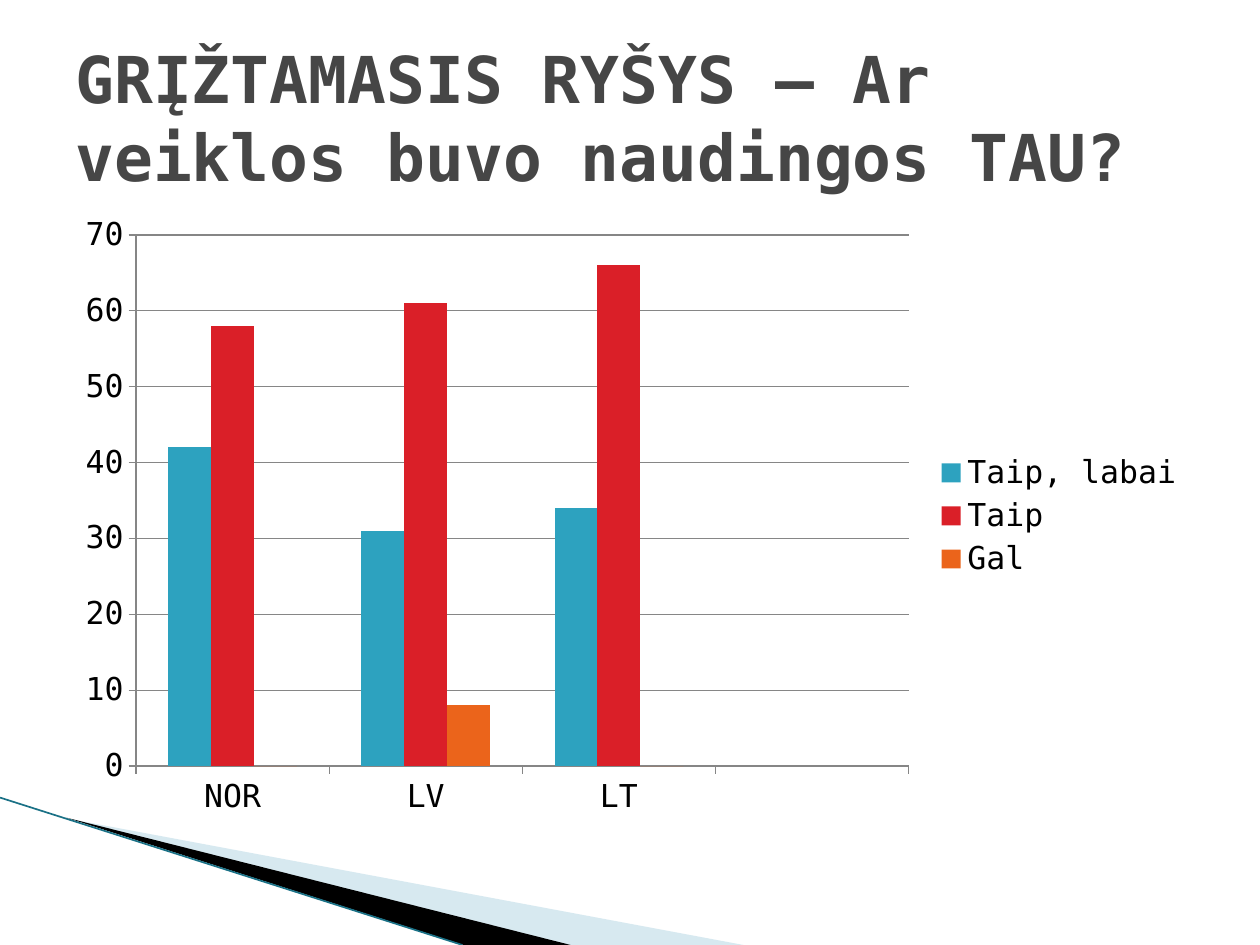
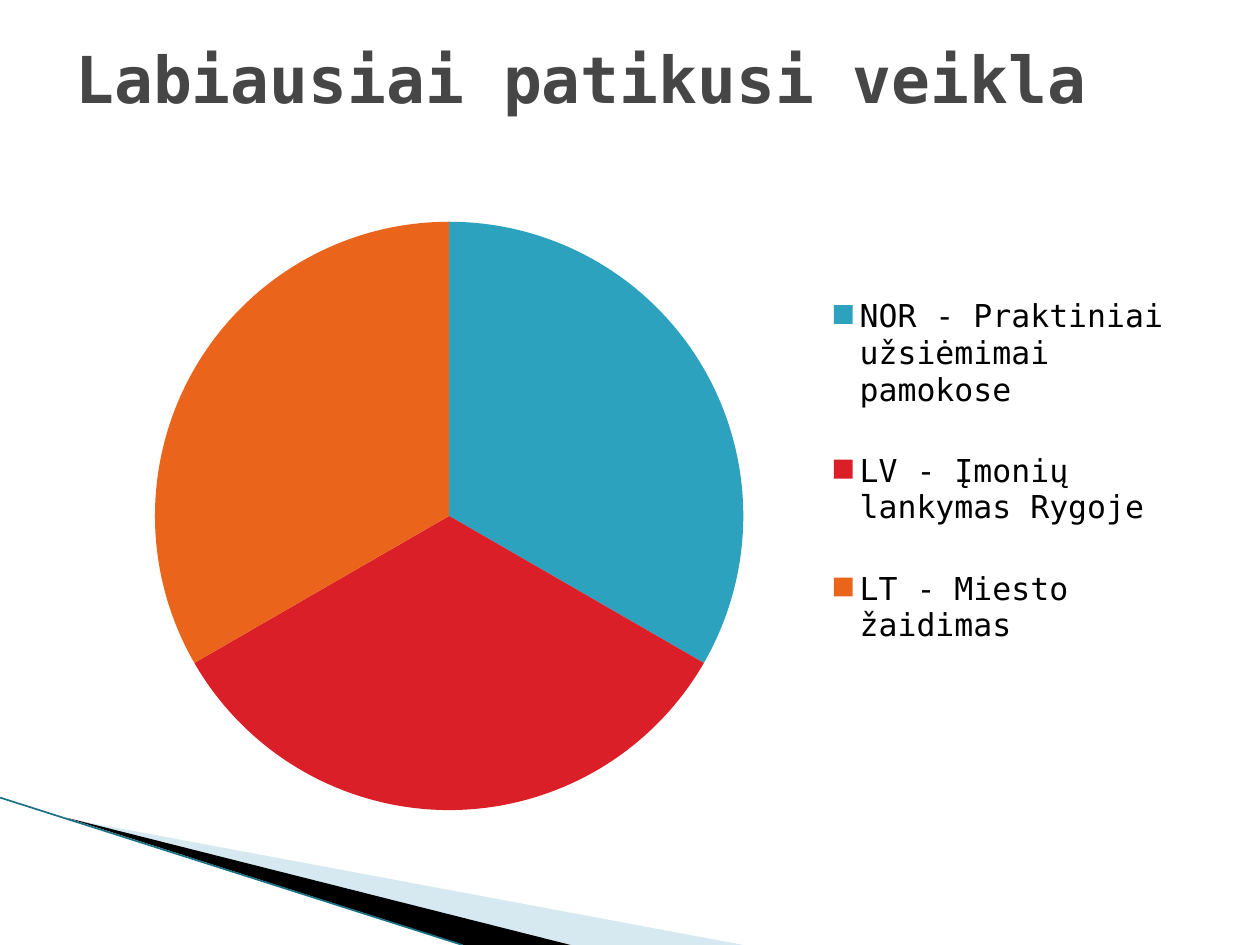
from lxml import etree
from pptx import Presentation
from pptx import util as u
from pptx.chart.data import CategoryChartData
from pptx.dml.color import RGBColor
from pptx.enum import chart as charts, shapes, text
from pptx.oxml import ns

COLOURS = {
    "title": "464646",
    "text": "000000",
    "axis": "868686",
    "pale band": "A0CBDC",
    "dark band": "000000",
    "edge": "1A7186",
    "blue": "2DA2BF",
    "red": "DA1F28",
    "orange": "EB641B",
}
SERIES_COLOURS = ("blue", "red", "orange")
FONT = "DejaVu Sans Mono"
CHART_BOX = (0.5, 1.62, 9, 4.95)


def colour(name):
    return RGBColor.from_string(COLOURS[name])


class Deck:
    def __init__(self):
        self.presentation = Presentation()
        self.presentation.slide_width = u.Inches(10)
        self.presentation.slide_height = u.Inches(7.5)
        self.slide = None

    def add_slide(self, title):
        layout = self.presentation.slide_layouts[6]
        self.slide = self.presentation.slides.add_slide(layout)
        self.band([(0.55, 6.5), (5.9, 7.5), (4.52, 7.5)], "pale band", opacity=42)
        self.band([(0.53, 6.49), (4.53, 7.5), (3.68, 7.5)], "dark band")
        self.line((0, 6.33), (3.67, 7.5), "edge", 0.95)
        self.title(title)

    def band(self, points, fill, opacity=100):
        corners = [(u.Inches(x), u.Inches(y)) for x, y in points]
        builder = self.slide.shapes.build_freeform(*corners[0])
        builder.add_line_segments(corners[1:], close=True)
        shape = builder.convert_to_shape()
        shape.shadow.inherit = False
        shape.line.fill.background()
        shape.fill.solid()
        shape.fill.fore_color.rgb = colour(fill)
        if opacity < 100:
            fill_colour = shape.element.spPr.find(".//" + ns.qn("a:srgbClr"))
            alpha = etree.SubElement(fill_colour, ns.qn("a:alpha"))
            alpha.set("val", str(opacity * 1000))

    def line(self, start, end, line_colour, width):
        ends = [u.Inches(value) for value in start + end]
        connector = self.slide.shapes.add_connector(
            shapes.MSO_CONNECTOR.STRAIGHT, *ends)
        connector.line.color.rgb = colour(line_colour)
        connector.line.width = u.Pt(width)
        etree.SubElement(connector.element.spPr, ns.qn("a:effectLst"))

    def title(self, words):
        box = self.slide.shapes.add_textbox(
            u.Inches(0.5), u.Inches(0.3), u.Inches(9), u.Inches(1.25))
        frame = box.text_frame
        frame.word_wrap = True
        frame.vertical_anchor = text.MSO_ANCHOR.TOP
        frame.margin_top = u.Inches(0.01)
        run = frame.paragraphs[0].add_run()
        run.text = words
        run.font.name = FONT
        run.font.size = u.Pt(36.9)
        run.font.bold = True
        run.font.color.rgb = colour("title")

    def chart(self, kind, categories, series):
        data = CategoryChartData()
        data.categories = categories
        for name, values in series:
            data.add_series(name, values)
        box = [u.Inches(value) for value in CHART_BOX]
        chart = self.slide.shapes.add_chart(kind, *box, data).chart
        chart.has_title = False
        chart.font.name = FONT
        chart.font.size = u.Pt(18)
        chart.font.color.rgb = colour("text")
        chart.has_legend = True
        chart.legend.position = charts.XL_LEGEND_POSITION.RIGHT
        chart.legend.include_in_layout = False
        return chart

    def column_chart(self, categories, series):
        chart = self.chart(charts.XL_CHART_TYPE.COLUMN_CLUSTERED, categories, series)
        plot = chart.plots[0]
        plot.gap_width = 150
        plot.overlap = 0
        plot.vary_by_categories = False
        for column, name in zip(plot.series, SERIES_COLOURS):
            self.paint(column, name)
        for axis in (chart.category_axis, chart.value_axis):
            axis.major_tick_mark = charts.XL_TICK_MARK.OUTSIDE
            axis.format.line.color.rgb = colour("axis")
        gridlines = chart.value_axis.major_gridlines
        gridlines.format.line.color.rgb = colour("axis")

    def pie_chart(self, categories, name, values):
        chart = self.chart(charts.XL_CHART_TYPE.PIE, categories, [(name, values)])
        plot = chart.plots[0]
        plot.vary_by_categories = True
        for index, fill in enumerate(SERIES_COLOURS):
            self.paint(plot.series[0].points[index], fill)
        plot_area = chart.element.find(".//" + ns.qn("c:plotArea"))
        legend = chart.element.find(".//" + ns.qn("c:legend"))
        self.place(plot_area, 1.23, 1.76, 4.67, 4.67, inner=True)
        self.place(legend, 6.5, 2.02, 2.85, 3.45)

    @staticmethod
    def paint(part, name):
        part.format.fill.solid()
        part.format.fill.fore_color.rgb = colour(name)

    @staticmethod
    def place(part, left, top, width, height, inner=False):
        """Fix a chart part at a place on the slide, given in inches."""
        for old in part.findall(ns.qn("c:layout")):
            part.remove(old)
        layout = etree.Element(ns.qn("c:layout"))
        manual = etree.SubElement(layout, ns.qn("c:manualLayout"))
        chart_left, chart_top, chart_width, chart_height = CHART_BOX
        settings = [("layoutTarget", "inner")] if inner else []
        settings += [
            ("xMode", "edge"),
            ("yMode", "edge"),
            ("x", (left - chart_left) / chart_width),
            ("y", (top - chart_top) / chart_height),
            ("w", width / chart_width),
            ("h", height / chart_height),
        ]
        for tag, value in settings:
            etree.SubElement(manual, ns.qn("c:" + tag)).set("val", str(value))
        position = part.find(ns.qn("c:legendPos"))
        part.insert(0 if position is None else 1, layout)


def main():
    deck = Deck()

    deck.add_slide("GRĮŽTAMASIS RYŠYS – Ar veiklos buvo naudingos TAU?")
    deck.column_chart(["NOR", "LV", "LT", ""], [
        ("Taip, labai", (42, 31, 34, None)),
        ("Taip", (58, 61, 66, None)),
        ("Gal", (0, 8, 0, None)),
    ])

    deck.add_slide("Labiausiai patikusi veikla")
    deck.pie_chart([
        "NOR - Praktiniai užsiėmimai pamokose",
        "LV - Įmonių lankymas Rygoje",
        "LT - Miesto žaidimas",
    ], "Series 1", (33, 33, 33))

    deck.presentation.save("out.pptx")


if __name__ == "__main__":
    main()
